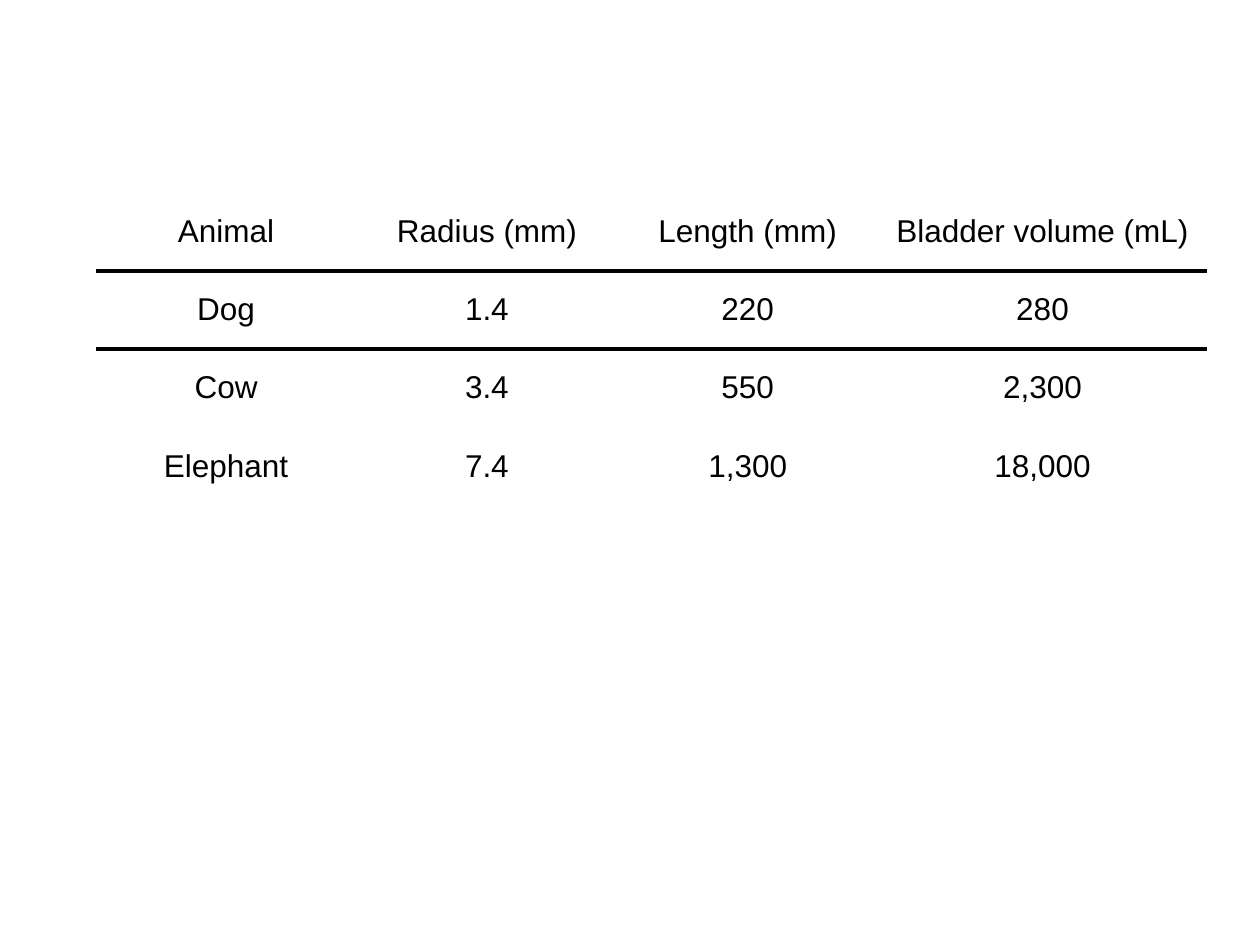
from typing import NamedTuple

from lxml.etree import SubElement
from pptx import Presentation
from pptx.dml.color import RGBColor
from pptx.enum.text import MSO_ANCHOR, PP_ALIGN
from pptx.oxml.ns import qn
from pptx.util import Inches, Pt

COLORS = {"background": "FFFFFF", "text": "000000", "rule": "000000"}
NO_STYLE = "{2D5ABB26-0587-4C30-8999-92F81FD0307C}"
COLUMN_WIDTHS = (2.07, 2.07, 2.07, 2.61)
ROW_HEIGHT = 0.62


class Animal(NamedTuple):
    name: str
    radius: str
    length: str
    bladder_volume: str


HEADINGS = Animal("Animal", "Radius (mm)", "Length (mm)", "Bladder volume (mL)")
ANIMALS = [
    Animal("Dog", "1.4", "220", "280"),
    Animal("Cow", "3.4", "550", "2,300"),
    Animal("Elephant", "7.4", "1,300", "18,000"),
]


def write_cell(cell, text: str, *, size: float = 18, font: str = "Arial",
               color: str = COLORS["text"]) -> None:
    cell.fill.background()
    cell.vertical_anchor = MSO_ANCHOR.MIDDLE
    para = cell.text_frame.paragraphs[0]
    para.alignment = PP_ALIGN.CENTER
    span = para.add_run()
    span.text = text
    span.font.size = Pt(size)
    span.font.name = font
    span.font.color.rgb = RGBColor.from_string(color)


def add_border(cell, edge: str, *, width: float = 2.25,
               color: str = COLORS["rule"]) -> None:
    """Draw one edge of a cell; edge is the tag lnT or lnB."""
    properties = cell._tc.get_or_add_tcPr()
    line = SubElement(properties, qn(f"a:{edge}"), w=str(Pt(width)))
    fill = SubElement(line, qn("a:solidFill"))
    SubElement(fill, qn("a:srgbClr"), val=color)
    properties.insert(0, line)  # borders come before the fill


def add_animal_table(slide, rows: list[Animal]) -> None:
    frame = slide.shapes.add_table(
        len(rows), len(COLUMN_WIDTHS), Inches(0.76), Inches(1.53),
        Inches(sum(COLUMN_WIDTHS)), Inches(ROW_HEIGHT * len(rows)))
    table = frame.table
    table.first_row = table.horz_banding = False
    table._tbl.tblPr.find(qn("a:tableStyleId")).text = NO_STYLE
    for column, width in zip(table.columns, COLUMN_WIDTHS):
        column.width = Inches(width)
    for row, animal in zip(table.rows, rows):
        row.height = Inches(ROW_HEIGHT)
        for cell, text in zip(row.cells, animal):
            write_cell(cell, text)
    for row, edge in ((0, "lnB"), (1, "lnT")):
        for cell in table.rows[row].cells:
            add_border(cell, edge)


def main() -> None:
    deck = Presentation()
    deck.slide_width, deck.slide_height = Inches(10), Inches(7.5)
    slide = deck.slides.add_slide(deck.slide_layouts[6])
    background = slide.background.fill
    background.solid()
    background.fore_color.rgb = RGBColor.from_string(COLORS["background"])
    add_animal_table(slide, [HEADINGS, *ANIMALS])
    deck.save("out.pptx")


if __name__ == "__main__":
    main()
